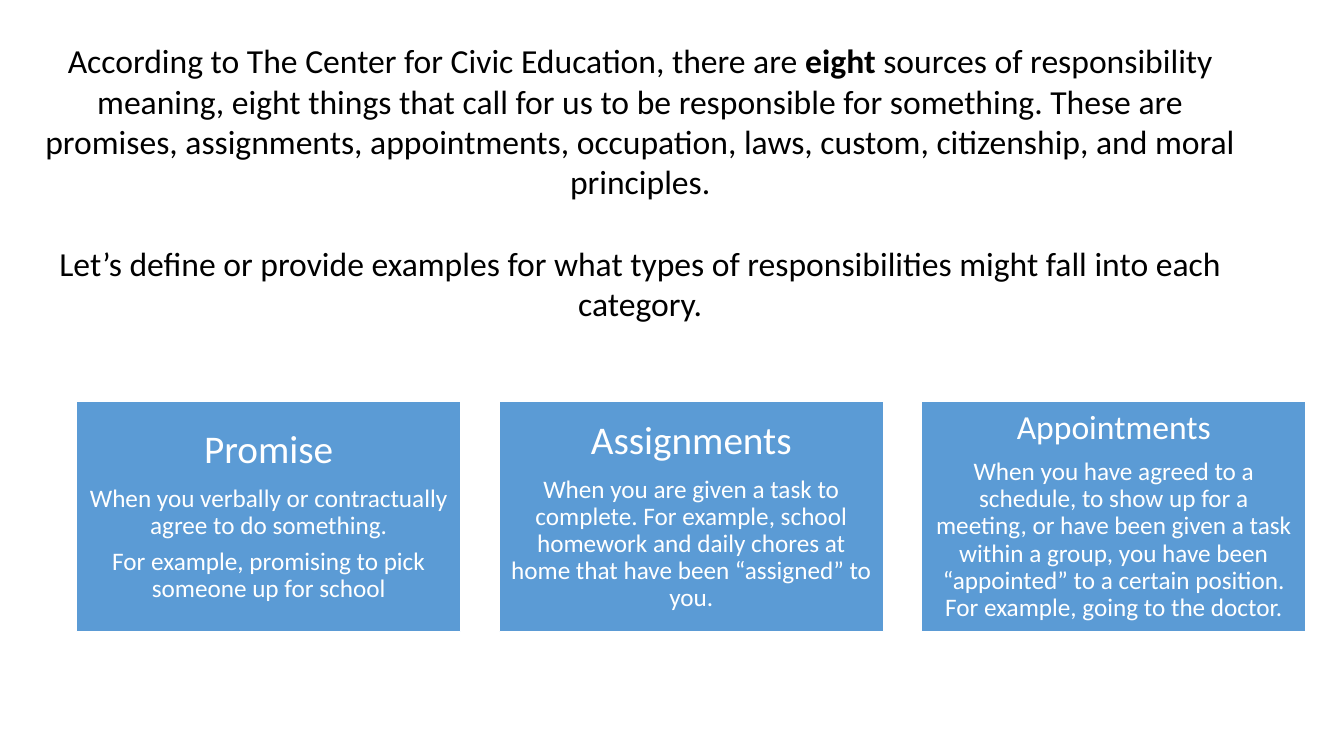
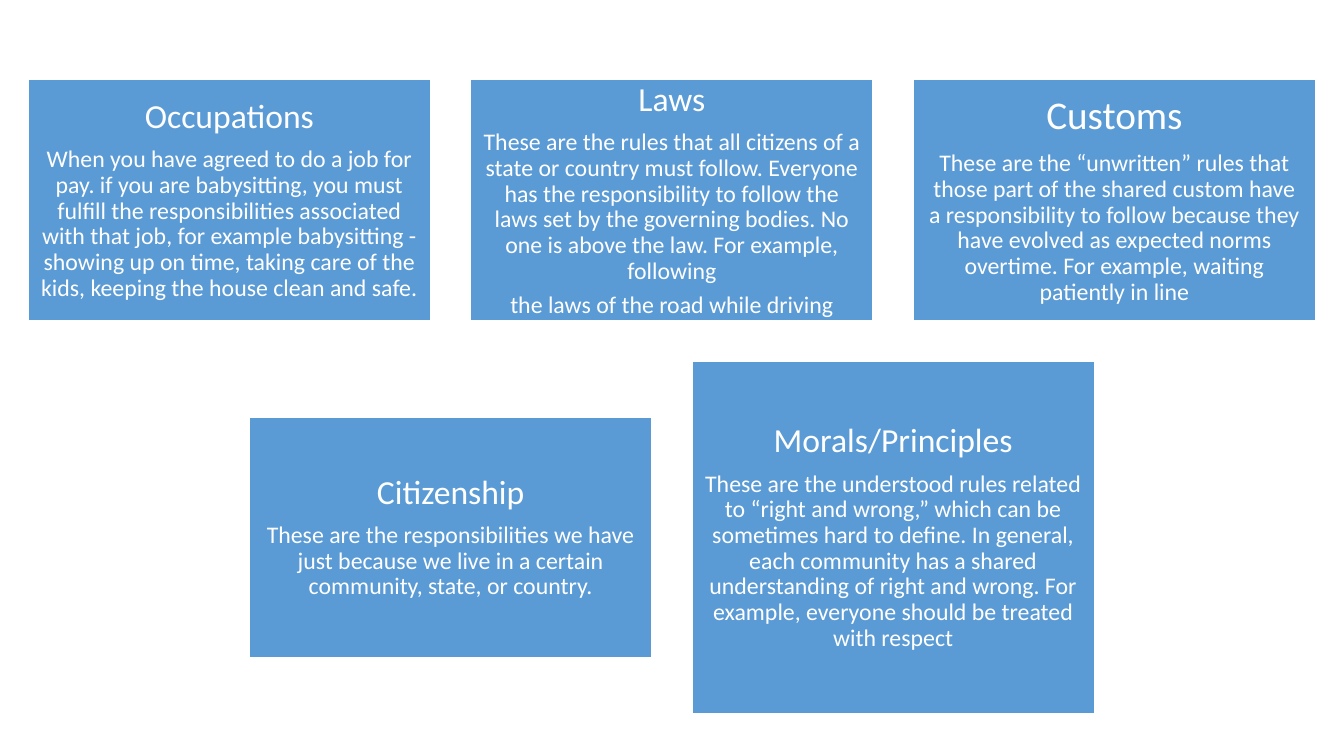
import dataclasses
from typing import Any

import pptx
import pptx.dml.color
import pptx.enum.shapes
import pptx.enum.text
import pptx.util

Inches, Pt = pptx.util.Inches, pptx.util.Pt
RGBColor = pptx.dml.color.RGBColor
CENTER = pptx.enum.text.PP_ALIGN.CENTER

# Shared look
BLACK = RGBColor(0x00, 0x00, 0x00)
WHITE = RGBColor(0xFF, 0xFF, 0xFF)
BLUE = RGBColor(0x5B, 0x9B, 0xD5)
FONT = "Calibri"
INTRO_SIZE = 24
INTRO_LINE = 1.22  # height of one line, as a share of the type size
CARD_GAP = 0.1  # shares of the card width
CARD_HEIGHT = 0.6
AFTER_SHARE = 0.35  # shares of the type size
INSET_SHARE = 0.3


@dataclasses.dataclass(frozen=True)
class Grid:
    """A grid of cards, in inches."""
    left: float
    top: float
    width: float
    body_size: int

    @property
    def gap(self) -> float:
        return self.width * CARD_GAP

    @property
    def height(self) -> float:
        return self.width * CARD_HEIGHT


@dataclasses.dataclass(frozen=True)
class Card:
    heading: str
    body: tuple[str, ...]
    column: float
    row: int = 0
    heading_size: int = 24
    height: float | None = None  # inches, when taller than the grid's cards


INTRO = (
    (("According to The Center for Civic Education, there are ", False),
     ("eight", True),
     (" sources of responsibility meaning, eight things that call for us to be "
      "responsible for something. These are promises, assignments, appointments, "
      "occupation, laws, custom, citizenship, and moral principles.", False)),
    (("Let’s define or provide examples for what types of responsibilities might "
      "fall into each category.", False),),
)

FIRST_GRID = Grid(left=0.76, top=3.98, width=3.81, body_size=18)
FIRST_CARDS = (
    Card("Promise",
         ("When you verbally or contractually agree to do something.",
          "For example, promising to pick someone up for school"),
         column=0, heading_size=28),
    Card("Assignments",
         ("When you are given a task to complete. For example, school homework and "
          "daily chores at home that have been “assigned” to you.",),
         column=1, heading_size=28),
    Card("Appointments",
         ("When you have agreed to a schedule, to show up for a meeting, or have been "
          "given a task within a group, you have been “appointed” to a certain "
          "position. For example, going to the doctor.",),
         column=2),
)

SECOND_GRID = Grid(left=0.28, top=0.79, width=3.99, body_size=17)
SECOND_CARDS = (
    Card("Occupations",
         ("When you have agreed to do a job for pay. if you are babysitting, you must "
          "fulfill the responsibilities associated with that job, for example "
          "babysitting - showing up on time, taking care of the kids, keeping the "
          "house clean and safe.",),
         column=0),
    Card("Laws",
         ("These are the rules that all citizens of a state or country must follow. "
          "Everyone has the responsibility to follow the laws set by the governing "
          "bodies. No one is above the law. For example, following",
          "the laws of the road while driving"),
         column=1),
    Card("Customs",
         ("These are the “unwritten” rules that those part of the shared custom have "
          "a responsibility to follow because they have evolved as expected norms "
          "overtime. For example, waiting patiently in line",),
         column=2, heading_size=28),
    Card("Citizenship",
         ("These are the responsibilities we have just because we live in a certain "
          "community, state, or country.",),
         column=0.5, row=1),
    Card("Morals/Principles",
         ("These are the understood rules related to “right and wrong,” which can be "
          "sometimes hard to define. In general, each community has a shared "
          "understanding of right and wrong. For example, everyone should be treated "
          "with respect",),
         column=1.5, row=1, height=3.5),
)


def apply(target: Any, values: dict[str, Any]) -> None:
    for name, value in values.items():
        setattr(target, name, value)


def add_span(para: Any, text: str, size: int, color: RGBColor, bold: bool = False) -> None:
    span = para.add_run()
    span.text = text
    apply(span.font, {"name": FONT, "size": Pt(size), "bold": bold})
    span.font.color.rgb = color


def next_para(frame: Any, index: int) -> Any:
    return frame.add_paragraph() if index else frame.paragraphs[0]


def add_intro(page: Any) -> None:
    box = page.shapes.add_textbox(Inches(0.25), Inches(0.35), Inches(12.2), Inches(2.93))
    box.text_frame.word_wrap = True
    for index, spans in enumerate(INTRO):
        para = next_para(box.text_frame, index)
        para.alignment = CENTER
        if index:
            para.space_before = Pt(INTRO_SIZE * INTRO_LINE)
        for text, bold in spans:
            add_span(para, text, INTRO_SIZE, BLACK, bold)


def add_card(page: Any, grid: Grid, card: Card, top: float, height: float) -> None:
    left = grid.left + card.column * (grid.width + grid.gap)
    box = page.shapes.add_shape(
        pptx.enum.shapes.MSO_SHAPE.RECTANGLE,
        Inches(left), Inches(top), Inches(grid.width), Inches(height))
    box.shadow.inherit = False
    box.fill.solid()
    box.fill.fore_color.rgb = BLUE
    box.line.color.rgb = WHITE
    box.line.width = Pt(1)

    inset = Pt(card.heading_size * INSET_SHARE)
    frame = box.text_frame
    apply(frame, {"word_wrap": True,
                  "vertical_anchor": pptx.enum.text.MSO_ANCHOR.MIDDLE,
                  "margin_left": inset, "margin_right": inset,
                  "margin_top": inset, "margin_bottom": inset})
    for index, text in enumerate((card.heading, *card.body)):
        size = grid.body_size if index else card.heading_size
        para = next_para(frame, index)
        apply(para, {"alignment": CENTER, "line_spacing": 0.9,
                     "space_after": Pt(size * AFTER_SHARE)})
        add_span(para, text, size, WHITE)


def add_cards(page: Any, grid: Grid, cards: tuple[Card, ...]) -> None:
    """Draw the cards row by row, each centred on the tallest of its row."""
    top = grid.top
    for row in sorted({card.row for card in cards}):
        members = [card for card in cards if card.row == row]
        heights = [card.height or grid.height for card in members]
        tallest = max(heights)
        for card, height in zip(members, heights):
            add_card(page, grid, card, top + (tallest - height) / 2, height)
        top += tallest + grid.gap


def main() -> None:
    deck = pptx.Presentation()
    deck.slide_width, deck.slide_height = Inches(13.33), Inches(7.5)
    blank = deck.slide_layouts[6]

    # Introduction and the first three sources
    page = deck.slides.add_slide(blank)
    add_intro(page)
    add_cards(page, FIRST_GRID, FIRST_CARDS)

    # The other five sources
    page = deck.slides.add_slide(blank)
    add_cards(page, SECOND_GRID, SECOND_CARDS)

    deck.save("out.pptx")


if __name__ == "__main__":
    main()
